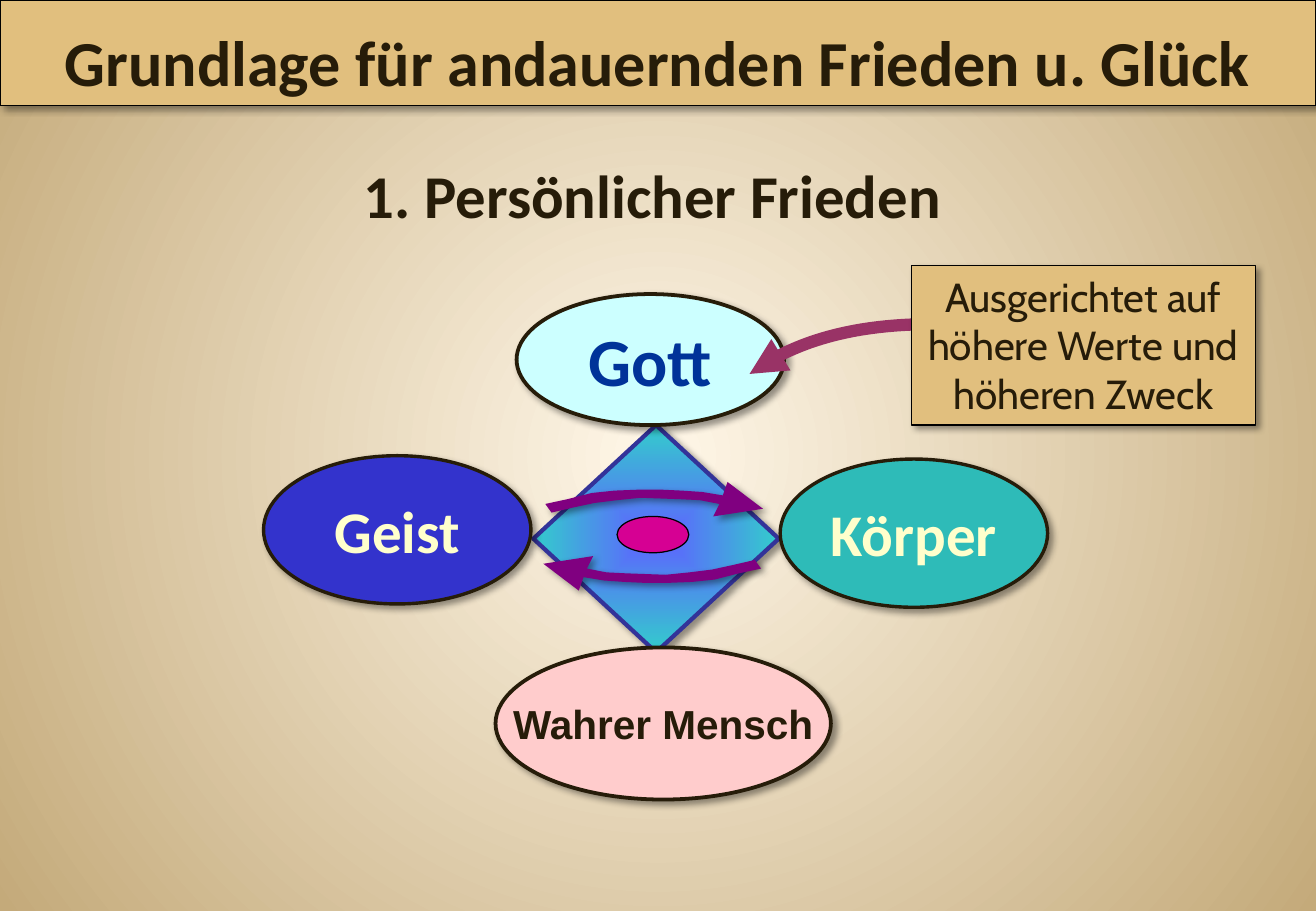
"""Build a slide on the foundation of lasting peace and happiness."""
from lxml import etree
from pptx import Presentation
from pptx.dml import color
from pptx.enum import shapes, text
from pptx.oxml import ns
from pptx.util import Cm, Pt

KIND = shapes.MSO_SHAPE
DARK, SAND, CREAM, BLACK = "261C09", "E1BF7E", "FFFFCC", "000000"
SWEEP = [
    (15.04, 10.54), (14.63, 10.46), (14.22, 10.44), (13.39, 10.41),
    (12.9, 10.46), (12.42, 10.52), (11.96, 10.62), (11.53, 10.72),
    (11.4, 10.54), (11.86, 10.44), (12.37, 10.31), (12.85, 10.26),
    (13.36, 10.24), (13.82, 10.24), (14.25, 10.26), (14.68, 10.29),
    (15.11, 10.36), (15.21, 10.08), (15.95, 10.64), (14.91, 10.8),
]
BEND = [(15.67, 7.82), (16.64, 7.11), (17.91, 6.78), (19.48, 6.78)]


def rgb(code):
    return color.RGBColor.from_string(code)


def add(node, tag, **attrs):
    return etree.SubElement(node, ns.qn(tag), **attrs)


def blend(fill, node, way, inner, outer):
    """Fill with a gradient that runs from the centre outwards."""
    fill.solid()
    old = node.find(ns.qn("a:solidFill"))
    grad = etree.Element(ns.qn("a:gradFill"), rotWithShape="1")
    stops = add(grad, "a:gsLst")
    for pos, code in (("0", inner), ("100000", outer)):
        add(add(stops, "a:gs", pos=pos), "a:srgbClr", val=code)
    sides = dict.fromkeys("ltrb", "50000")
    add(add(grad, "a:path", path=way), "a:fillToRect", **sides)
    node.replace(old, grad)


def shade(shape):
    """Give the shape a soft shadow to the lower right."""
    shape.shadow.inherit = False
    root = shape._element.spPr.find(ns.qn("a:effectLst"))
    drop = add(root, "a:outerShdw", blurRad=str(Pt(4)), dist=str(Pt(3)),
               dir="2700000", algn="tl", rotWithShape="0")
    add(add(drop, "a:srgbClr", val=BLACK), "a:alpha", val="40000")


def write(shape, words, size, font="Calibri", ink=DARK, bold=True,
          anchor="MIDDLE", wrap=True):
    """Write one centred run into the shape."""
    frame = shape.text_frame
    frame.word_wrap = wrap
    frame.vertical_anchor = text.MSO_ANCHOR[anchor]
    para = frame.paragraphs[0]
    para.alignment = text.PP_ALIGN.CENTER
    run = para.add_run()
    run.text = words
    face = run.font
    face.name, face.size, face.bold = font, Pt(size), bold
    face.color.rgb = rgb(ink)


def draw(slide, kind, box, fill, edge=BLACK, width=0.75, drop=True):
    """Draw a filled and outlined preset shape."""
    shape = slide.shapes.add_shape(kind, *map(Cm, box))
    shape.shadow.inherit = False
    if fill:
        shape.fill.solid()
        shape.fill.fore_color.rgb = rgb(fill)
    shape.line.color.rgb = rgb(edge)
    shape.line.width = Pt(width)
    if drop:
        shade(shape)
    return shape


def trace(slide, points, close):
    """Draw straight lines through the points."""
    spots = [(Cm(x), Cm(y)) for x, y in points]
    form = slide.shapes.build_freeform(*spots[0])
    form.add_line_segments(spots[1:], close=close)
    shape = form.convert_to_shape()
    shape.shadow.inherit = False
    return shape


def sweep(slide, points):
    """Draw a block arrow with a swept shaft."""
    shape = trace(slide, points, True)
    shape.fill.solid()
    shape.fill.fore_color.rgb = rgb("800080")
    shape.line.fill.background()
    shade(shape)


def bend(slide, ends, steps=24):
    """Draw a Bézier curve with an arrowhead at its start."""
    points = []
    for step in range(steps + 1):
        t = step / steps
        mix = ((1 - t) ** 3, 3 * t * (1 - t) ** 2, 3 * t * t * (1 - t), t ** 3)
        points.append([sum(m * v for m, v in zip(mix, axis))
                       for axis in zip(*ends)])
    shape = trace(slide, points, False)
    shape.fill.background()
    shape.line.color.rgb = rgb("993366")
    shape.line.width = Pt(7.25)
    add(shape.line._get_or_add_ln(), "a:headEnd", type="triangle")


def main():
    deck = Presentation()
    deck.slide_width, deck.slide_height = Cm(27.51), Cm(19.05)
    slide = deck.slides.add_slide(deck.slide_layouts[6])
    back = slide.background.fill
    back.solid()
    blend(back, slide._element.cSld.bg.bgPr, "circle", "FFF7E8", "C4AA7A")

    head = slide.shapes.add_textbox(Cm(7.19), Cm(3.18), Cm(12.9), Cm(1.8))
    write(head, "1. Persönlicher Frieden", 36, anchor="TOP")
    title = draw(slide, KIND.RECTANGLE, (0, 0, 27.51, 2.21), SAND)
    write(title, "Grundlage für andauernden Frieden u. Glück", 38,
          anchor="BOTTOM")

    core = draw(slide, KIND.DIAMOND, (11.15, 8.89, 5.13, 4.75), None,
                "333399", 2.5)
    blend(core.fill, core._element.spPr, "shape", "5D64FF", "33CCCC")

    for words, box, fill, width, size, font, ink in (
        ("Geist", (5.51, 9.53, 5.59, 3.1), "3333CC", 2, 35, "Calibri", CREAM),
        ("Körper", (16.31, 9.6, 5.59, 3.1), "2EBBB8", 2, 35, "Calibri", CREAM),
        ("Gott", (10.8, 6.15, 5.59, 2.74), "CCFFFF", 2.25, 40, "Calibri",
         "003399"),
        ("Wahrer Mensch", (10.36, 13.54, 7.01, 3.18), "FFCCCC", 2.25, 24,
         "Arial", DARK),
    ):
        oval = draw(slide, KIND.OVAL, box, fill, DARK, width)
        write(oval, words, size, font, ink, wrap=False)

    draw(slide, KIND.OVAL, (12.9, 10.8, 1.5, 0.76), "D60093", drop=False)
    sweep(slide, SWEEP)
    sweep(slide, [(27.31 - x, 22.43 - y) for x, y in SWEEP])
    bend(slide, BEND)
    note = draw(slide, KIND.RECTANGLE, (19.05, 5.56, 7.19, 3.33), SAND)
    write(note, "Ausgerichtet auf höhere Werte und höheren Zweck", 24,
          "Cabin", bold=False, anchor="TOP")
    deck.save("out.pptx")


if __name__ == "__main__":
    main()
